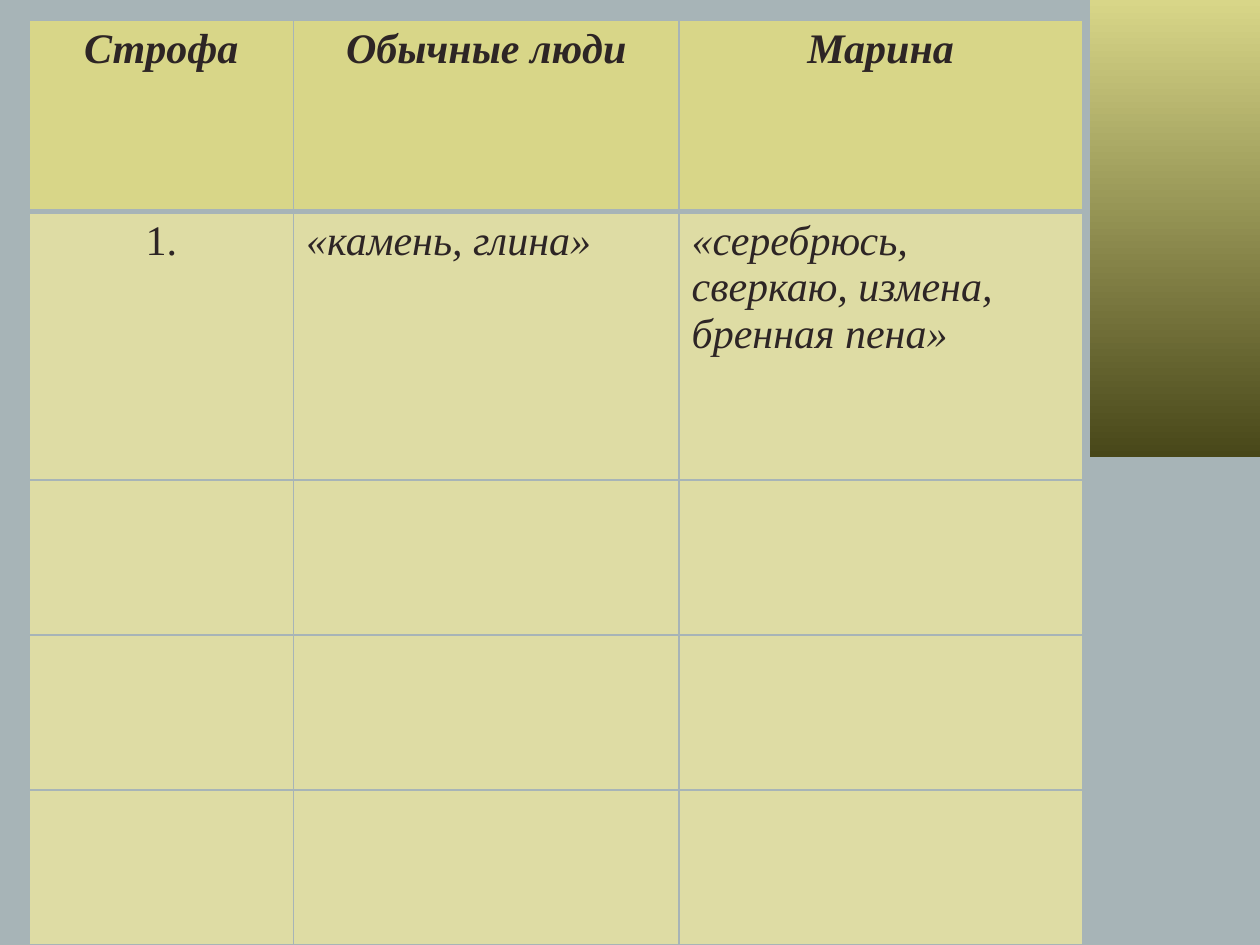
from lxml import etree
from pptx import Presentation
from pptx.dml.color import RGBColor
from pptx.enum.shapes import MSO_SHAPE
from pptx.enum.text import PP_ALIGN
from pptx.oxml.ns import qn
from pptx.util import Inches, Pt

RECTANGLE = MSO_SHAPE.RECTANGLE
CENTER, LEFT = PP_ALIGN.CENTER, PP_ALIGN.LEFT
BACKGROUND = "A7B4B7"
HEADER_FILL = "D8D688"
BODY_FILL = "DEDCA4"
TEXT_COLOR = "2D2525"


def color(value):
    return RGBColor.from_string(value)


def add_border(cell, side, points):
    line = etree.SubElement(cell._tc.get_or_add_tcPr(), qn(f"a:ln{side}"), w=str(Pt(points)))
    fill = etree.SubElement(line, qn("a:solidFill"))
    etree.SubElement(fill, qn("a:srgbClr"), val=BACKGROUND)


deck = Presentation()
deck.slide_width, deck.slide_height = Inches(10), Inches(7.5)
page = deck.slides.add_slide(deck.slide_layouts[6])
page.background.fill.solid()
page.background.fill.fore_color.rgb = color(BACKGROUND)

side_panel = page.shapes.add_shape(RECTANGLE, Inches(8.65), 0, Inches(1.36), Inches(3.63))
side_panel.shadow.inherit = False
side_panel.line.fill.background()
side_panel.fill.gradient()
side_panel.fill.gradient_angle = 270
for stop, value in zip(side_panel.fill.gradient_stops, (HEADER_FILL, "484719")):
    stop.color.rgb = color(value)

column_widths = [2.1, 3.06, 3.2]
row_heights = [1.52, 2.13, 1.23, 1.23, 1.23]
texts = [
    ["Строфа", "Обычные люди", "Марина"],
    ["1.", "«камень, глина»", "«серебрюсь, сверкаю, измена, бренная пена»"],
]

table = page.shapes.add_table(
    len(row_heights), len(column_widths),
    Inches(0.23), Inches(0.16), Inches(sum(column_widths)), Inches(sum(row_heights)),
).table
table.first_row = table.horz_banding = False
for column, width in zip(table.columns, column_widths):
    column.width = Inches(width)

for row_index, height in enumerate(row_heights):
    table.rows[row_index].height = Inches(height)
    is_header = row_index == 0
    for column_index in range(len(column_widths)):
        cell = table.cell(row_index, column_index)
        top = 3 if row_index == 1 else 1
        bottom = 3 if is_header else 1
        for side, points in (("L", 1), ("R", 1), ("T", top), ("B", bottom)):
            add_border(cell, side, points)
        cell.fill.solid()
        cell.fill.fore_color.rgb = color(HEADER_FILL if is_header else BODY_FILL)
        if row_index >= len(texts):
            continue
        para = cell.text_frame.paragraphs[0]
        para.text = texts[row_index][column_index]
        para.alignment = CENTER if is_header or column_index == 0 else LEFT
        para.font.name = "Times New Roman"
        para.font.size = Pt(24)
        para.font.bold = is_header
        para.font.italic = is_header or column_index > 0
        para.font.color.rgb = color(TEXT_COLOR)

deck.save("out.pptx")
